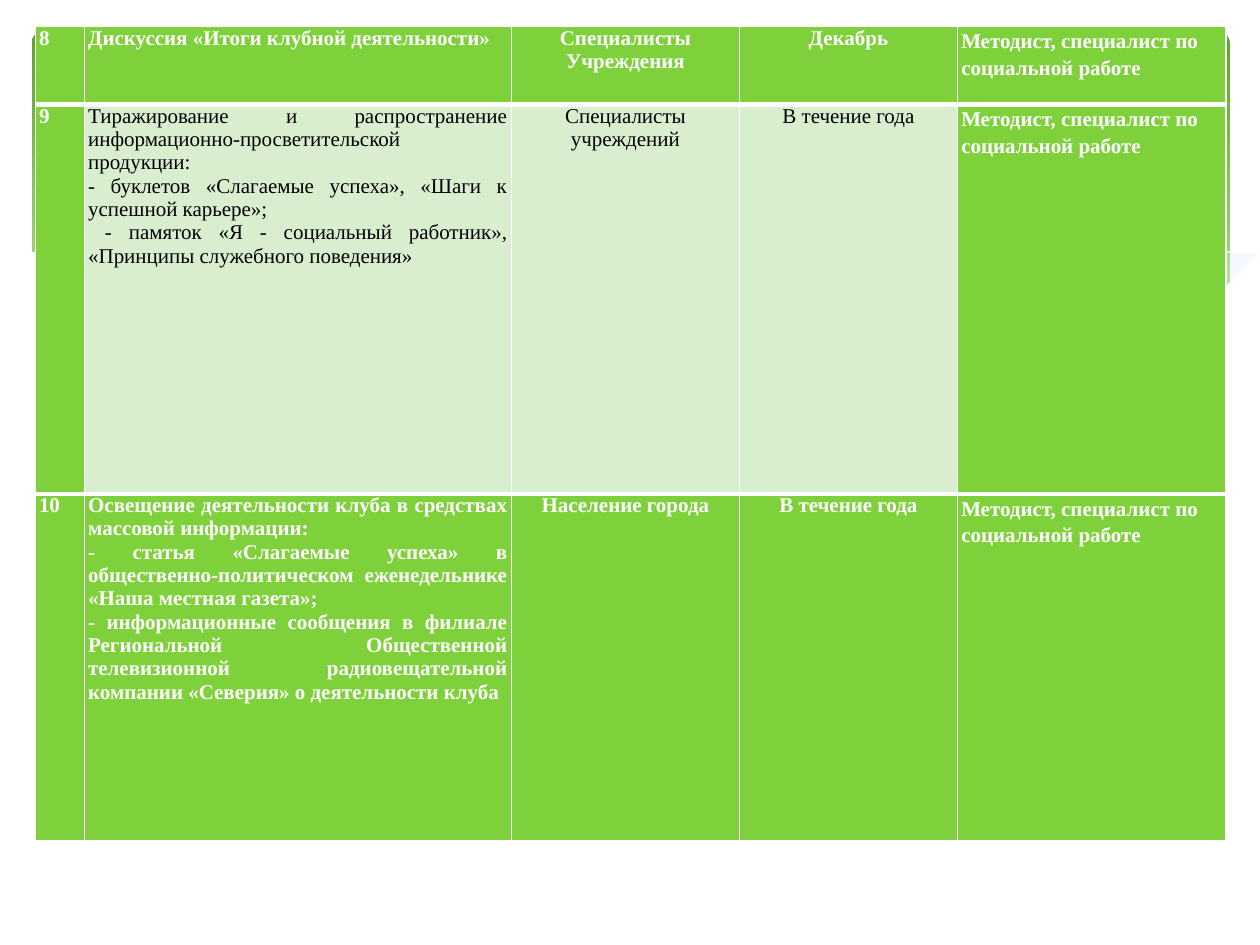
from lxml import etree
from pptx import Presentation
from pptx.dml.color import RGBColor
from pptx.enum.shapes import MSO_SHAPE as Shape
from pptx.enum.text import PP_ALIGN as Align
from pptx.oxml.ns import qn
from pptx.util import Inches, Pt

WIDTH, HEIGHT = 10, 7.5
WHITE, BLACK, GREEN, PALE, SKY = "FFFFFF", "000000", "7FD13B", "D8EECE", "D6ECFF"
COLUMNS = [0.39, 3.39, 1.81, 1.73, 2.13]
ROWS = [0.62, 3.09, 2.75]
ALIGNS = [Align.JUSTIFY, Align.JUSTIFY, Align.CENTER, Align.CENTER, Align.LEFT]
# Border widths in points: left, right, top, bottom
BORDERS = [(1, 1, 1, 3), (1, 1, 1, 1), (1, 1, 3, 1)]
RESPONSIBLE = "Методист, специалист по социальной работе"
EVENTS = [
    ["8", "Дискуссия «Итоги клубной деятельности»",
     "Специалисты Учреждения", "Декабрь", RESPONSIBLE],
    ["9", "Тиражирование и распространение информационно-просветительской продукции:\n"
          "- буклетов «Слагаемые успеха», «Шаги к успешной карьере»;\n"
          " - памяток «Я - социальный работник», «Принципы служебного поведения»",
     "Специалисты учреждений", "В течение года", RESPONSIBLE],
    ["10", "Освещение деятельности клуба в средствах массовой информации:\n"
           "- статья «Слагаемые успеха» в общественно-политическом еженедельнике "
           "«Наша местная газета»;\n"
           "- информационные сообщения в филиале Региональной Общественной "
           "телевизионной радиовещательной компании «Северия» о деятельности клуба",
     "Население города", "В течение года", RESPONSIBLE],
]

# Wave outlines as shares of the backdrop's box
RIGHT_WAVE = [(1, 0.65), (0.88, 0.73), (0.74, 0.82), (0.67, 0.89), (0.74, 0.92),
              (0.83, 0.94), (0.91, 0.91), (0.96, 0.87), (1, 0.82)]
LONG_WAVE = [(0.91, 0.92), (0.79, 0.85), (0.64, 0.73), (0.54, 0.66), (0.44, 0.6),
             (0.35, 0.59), (0.27, 0.61), (0.35, 0.66), (0.45, 0.73), (0.57, 0.83),
             (0.69, 0.9), (0.8, 0.94), (0.87, 0.93)]
FALLING_LINE = [(0.3, 0.63), (0.36, 0.6), (0.45, 0.6), (0.56, 0.64), (0.67, 0.7),
                (0.77, 0.77), (0.85, 0.84), (0.93, 0.91)]
RISING_LINE = [(0.62, 0.86), (0.73, 0.76), (0.82, 0.69), (0.91, 0.63), (1, 0.59)]
WHITE_WAVE = [(1, 0.82), (0.93, 0.89), (0.83, 0.93), (0.72, 0.91), (0.58, 0.83),
              (0.44, 0.72), (0.33, 0.64), (0.24, 0.6), (0.16, 0.59), (0.1, 0.6),
              (0.05, 0.64), (0, 0.7), (0, 1.13), (1, 1.13)]


def rgb(code):
    return RGBColor.from_string(code)


def add_wave(slide, box, shares, color, opacity=100, closed=True):
    left, top, width, height = box
    points = [(left + x * width, top + y * height) for x, y in shares]
    builder = slide.shapes.build_freeform(*points[0], scale=Inches(1))
    builder.add_line_segments(points[1:], close=closed)
    wave = builder.convert_to_shape()
    wave.shadow.inherit = False
    if not closed:
        wave.fill.background()
        wave.line.color.rgb = rgb(color)
        wave.line.width = 0
        return
    wave.line.fill.background()
    wave.fill.solid()
    wave.fill.fore_color.rgb = rgb(color)
    if opacity < 100:
        tint = wave.fill._xPr.find(".//" + qn("a:srgbClr"))
        etree.SubElement(tint, qn("a:alpha"), val=str(opacity * 1000))


def add_backdrop(slide, box):
    panel = slide.shapes.add_shape(Shape.ROUNDED_RECTANGLE, *map(Inches, box))
    panel.adjustments[0] = 0.034
    panel.shadow.inherit = False
    panel.line.fill.background()
    panel.fill.gradient()
    panel.fill.gradient_angle = 270
    for stop, position, color in zip(panel.fill.gradient_stops, (0, 0.9),
                                     ("5FA326", "B2E389")):
        stop.position = position
        stop.color.rgb = rgb(color)
    add_wave(slide, box, RIGHT_WAVE, SKY, 29)
    add_wave(slide, box, LONG_WAVE, SKY, 40)
    for line in (FALLING_LINE, RISING_LINE):
        add_wave(slide, box, line, WHITE, closed=False)
    left, top, width, height = box
    add_wave(slide, (left - 0.02, top, width + 0.03, height), WHITE_WAVE, WHITE)


def set_borders(cell, widths):
    properties = cell._tc.get_or_add_tcPr()
    for index, (side, width) in enumerate(zip("LRTB", widths)):
        border = etree.Element(qn("a:ln" + side), w=str(Pt(width)))
        fill = etree.SubElement(border, qn("a:solidFill"))
        etree.SubElement(fill, qn("a:srgbClr"), val=WHITE)
        properties.insert(index, border)


def fill_cell(cell, text, align, plain, borders):
    margins = {"margin_left": 0.03, "margin_right": 0.03,
               "margin_top": 0, "margin_bottom": 0}
    for name, value in margins.items():
        setattr(cell, name, Inches(value))
    cell.fill.solid()
    cell.fill.fore_color.rgb = rgb(PALE if plain else GREEN)
    set_borders(cell, borders)
    cell.text = text
    font_format = {"name": "Times New Roman", "size": Pt(12), "bold": not plain}
    for paragraph in cell.text_frame.paragraphs:
        paragraph.alignment = align
        if align == Align.LEFT:
            paragraph.line_spacing = 1.15
        for run in paragraph.runs:
            for name, value in font_format.items():
                setattr(run.font, name, value)
            run.font.color.rgb = rgb(BLACK if plain else WHITE)


def add_plan(slide, box):
    plan = slide.shapes.add_table(len(ROWS), len(COLUMNS), *map(Inches, box)).table
    for column, share in zip(plan.columns, COLUMNS):
        column.width = Inches(box[2] * share / sum(COLUMNS))
    for row, share in zip(plan.rows, ROWS):
        row.height = Inches(box[3] * share / sum(ROWS))
    for r, event in enumerate(EVENTS):
        for c, text in enumerate(event):
            plain = r == 1 and 0 < c < len(COLUMNS) - 1
            fill_cell(plan.cell(r, c), text, ALIGNS[c], plain, BORDERS[r])


def main():
    deck = Presentation()
    deck.slide_width, deck.slide_height = Inches(WIDTH), Inches(HEIGHT)
    slide = deck.slides.add_slide(deck.slide_layouts[6])
    slide.background.fill.solid()
    slide.background.fill.fore_color.rgb = rgb(WHITE)
    add_backdrop(slide, (0.025 * WIDTH, HEIGHT / 30, 0.951 * WIDTH, 0.36 * HEIGHT))
    add_plan(slide, (0.028 * WIDTH, 0.028 * HEIGHT, sum(COLUMNS), sum(ROWS)))
    deck.save("out.pptx")


if __name__ == "__main__":
    main()
